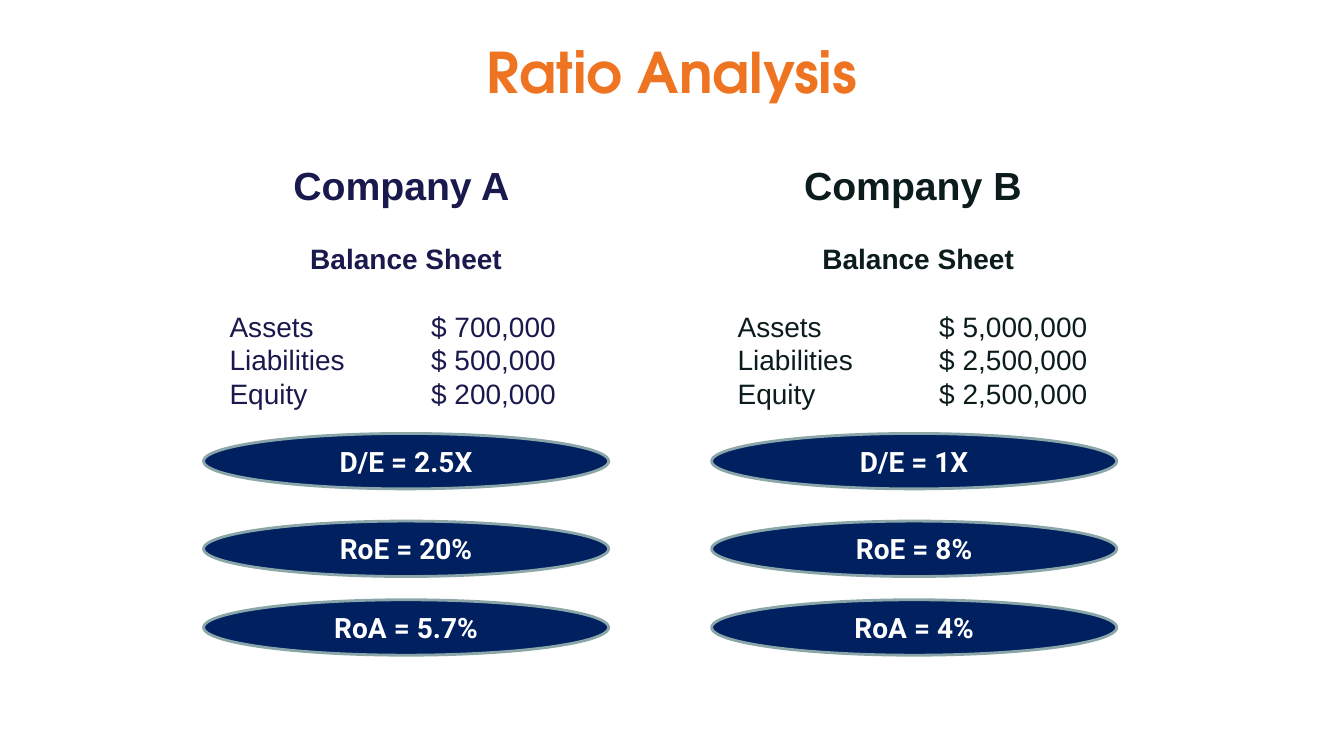
from pptx import Presentation
from pptx import util as u
from pptx.dml.color import RGBColor
from pptx.enum import shapes, text
from pptx.oxml.ns import qn
from lxml import etree

HUES = {"title": "EE7421", "navy": "19194D", "dark": "0C1C1D",
        "oval": "002060", "edge": "8AA6A8", "white": "FFFFFF"}
MID = text.PP_ALIGN.CENTER
LEFT = text.PP_ALIGN.LEFT


class Deck:
    def __init__(self):
        self.prs = Presentation()
        self.prs.slide_width, self.prs.slide_height = u.Pt(960), u.Pt(540)
        self.slide = self.prs.slides.add_slide(self.prs.slide_layouts[6])

    def hue(self, name):
        return RGBColor.from_string(HUES[name])

    def frame(self, shape, inset=None, anchor=text.MSO_ANCHOR.MIDDLE):
        frame = shape.text_frame
        form = {"word_wrap": True, "vertical_anchor": anchor}
        if inset is not None:
            for side in ("left", "right", "top", "bottom"):
                form["margin_" + side] = u.Pt(inset)
        for key, val in form.items():
            setattr(frame, key, val)
        return frame

    def label(self, para, words, hue, size, face, bold=True, align=MID,
              before=0, line=None, tab=None):
        para.text = words
        form = {"alignment": align, "space_before": u.Pt(before)}
        if line:
            form["line_spacing"] = u.Pt(line)
        for key, val in form.items():
            setattr(para, key, val)
        if tab:
            stops = etree.SubElement(para._p.get_or_add_pPr(), qn("a:tabLst"))
            etree.SubElement(stops, qn("a:tab"), pos=str(u.Pt(tab)), algn="l")
        for key, val in {"size": u.Pt(size), "name": face, "bold": bold}.items():
            setattr(para.font, key, val)
        para.font.color.rgb = self.hue(hue)

    def box(self, left, top, wide, high):
        return self.slide.shapes.add_textbox(*map(u.Pt, (left, top, wide, high)))

    def title(self, words):
        frame = self.frame(self.box(120, 0, 720, 102.24), 0)
        self.label(frame.paragraphs[0], words, "title", 40, "TeX Gyre Adventor")

    def sheet(self, left, wide, name, hue, rows):
        frame = self.frame(self.box(left, 111.6, wide, 186.5),
                           anchor=text.MSO_ANCHOR.TOP)
        self.label(frame.paragraphs[0], name, hue, 28, "Arial", line=33.6)
        self.label(frame.add_paragraph(), "Balance Sheet", hue, 20, "Arial",
                   before=24, line=24)
        for i, (item, value) in enumerate(rows):
            self.label(frame.add_paragraph(), f"{item}\t{value}", hue, 20, "Arial",
                       bold=False, align=LEFT, before=0 if i else 24, line=24,
                       tab=144)

    def oval(self, left, top, words):
        shape = self.slide.shapes.add_shape(
            shapes.MSO_SHAPE.OVAL, *map(u.Pt, (left, top, 289.4, 39.6)))
        shape.shadow.inherit = False
        shape.fill.solid()
        shape.fill.fore_color.rgb = self.hue("oval")
        shape.line.color.rgb = self.hue("edge")
        shape.line.width = u.Pt(2)
        self.label(self.frame(shape).paragraphs[0], words, "white", 20, "Roboto")


def main():
    items = ("Assets", "Liabilities", "Equity")
    tops = (309.6, 372.2, 428.4)
    firms = [
        ("Company A ", "navy", 266.4, ("$ 700,000", "$ 500,000", "$ 200,000"),
         ("D/E = 2.5X", "RoE = 20%", "RoA = 5.7%")),
        ("Company B ", "dark", 272.2, ("$ 5,000,000", "$ 2,500,000", "$ 2,500,000"),
         ("D/E = 1X", "RoE = 8%", "RoA = 4%")),
    ]
    deck = Deck()
    deck.title("Ratio Analysis")
    for i, (name, hue, wide, values, ratios) in enumerate(firms):
        left = 145.4 + i * 362.9
        deck.sheet(left + 11.5, wide, name, hue, zip(items, values))
        for top, ratio in zip(tops, ratios):
            deck.oval(left, top, ratio)
    deck.prs.save("out.pptx")


if __name__ == "__main__":
    main()
